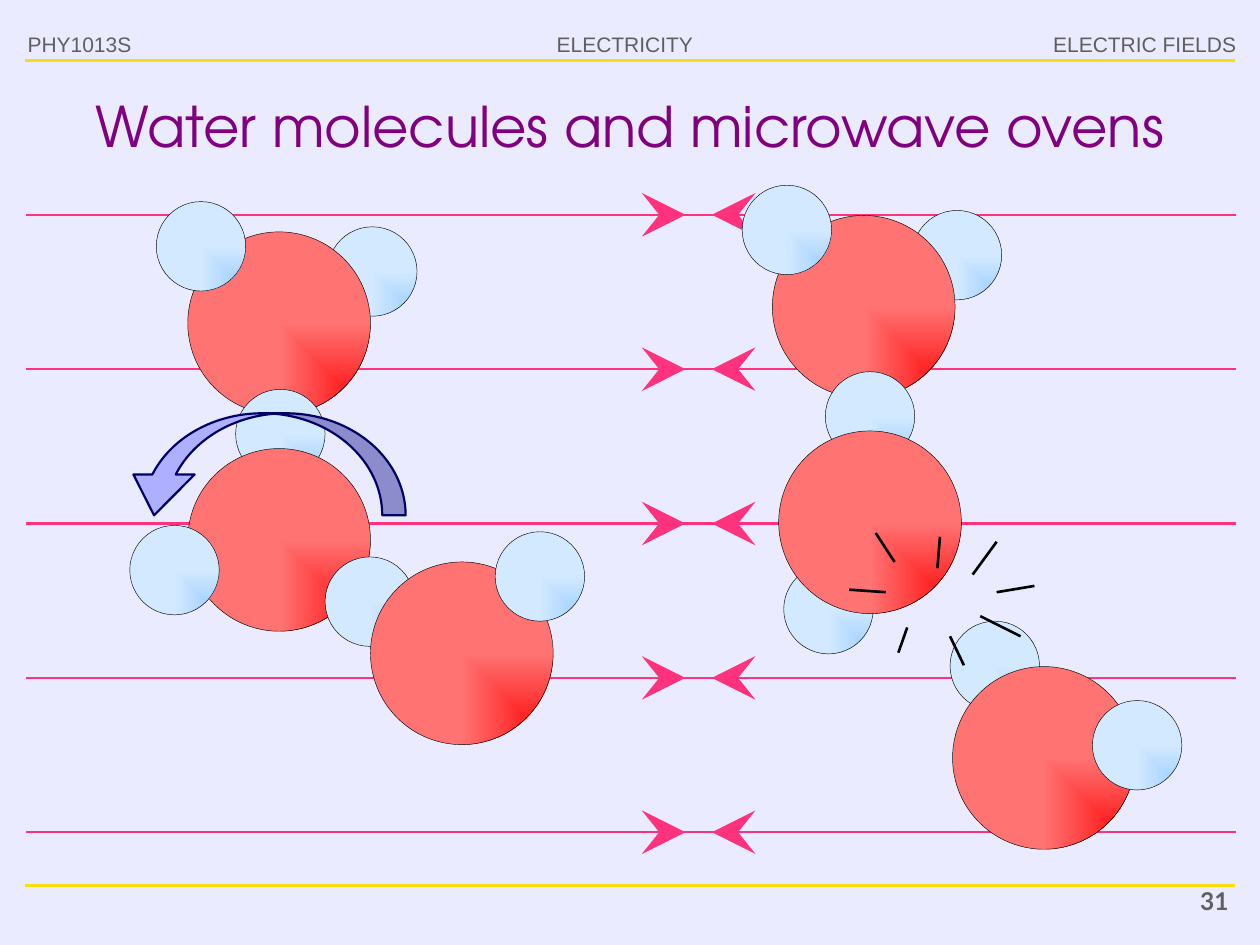
import pptx
import pptx.util
import pptx.oxml
import pptx.oxml.ns
from pptx.dml.color import RGBColor
from pptx.enum.shapes import MSO_CONNECTOR, MSO_SHAPE
from pptx.enum.text import MSO_ANCHOR, PP_ALIGN

BACKGROUND = RGBColor(0xEB, 0xEB, 0xFF)
YELLOW = RGBColor(0xF8, 0xDC, 0x0E)
GREY = RGBColor(0x5F, 0x5F, 0x5F)
PURPLE = RGBColor(0x80, 0x00, 0x80)
PINK = RGBColor(0xFF, 0x32, 0x7D)
BLACK = RGBColor(0x00, 0x00, 0x00)
LAVENDER = RGBColor(0xAF, 0xAF, 0xFF)
NAVY = RGBColor(0x00, 0x00, 0x66)
OXYGEN_DARK, OXYGEN_LIGHT = RGBColor(0xFF, 0x00, 0x00), RGBColor(0xFF, 0x73, 0x73)
HYDROGEN_DARK, HYDROGEN_LIGHT = RGBColor(0x99, 0xCC, 0xFF), RGBColor(0xD2, 0xE9, 0xFF)

presentation = pptx.Presentation()
presentation.slide_width = pptx.util.Inches(10)
presentation.slide_height = pptx.util.Inches(7.5)

# All places are counted on a grid of 100 columns and 75 rows
COLUMN = presentation.slide_width / 100
ROW = presentation.slide_height / 75

slide = presentation.slides.add_slide(presentation.slide_layouts[5])
slide.background.fill.solid()
slide.background.fill.fore_color.rgb = BACKGROUND


def add_line(start, end, color, width, arrow=False):
    line = slide.shapes.add_connector(
        MSO_CONNECTOR.STRAIGHT,
        round(start[0] * COLUMN), round(start[1] * ROW),
        round(end[0] * COLUMN), round(end[1] * ROW))
    line.line.color.rgb = color
    line.line.width = pptx.util.Pt(width)
    properties = line._element.spPr
    if arrow:
        head = pptx.oxml.parse_xml(
            f'<a:tailEnd {pptx.oxml.ns.nsdecls("a")} type="stealth" w="lg" len="lg"/>')
        properties.ln.append(head)
    properties.append(pptx.oxml.parse_xml(f'<a:effectLst {pptx.oxml.ns.nsdecls("a")}/>'))


def add_outlined_shape(kind, left, top, width, height, color, line_width):
    shape = slide.shapes.add_shape(
        kind, round(left * COLUMN), round(top * ROW),
        round(width * COLUMN), round(height * ROW))
    shape.line.color.rgb = color
    shape.line.width = pptx.util.Pt(line_width)
    shape.shadow.inherit = False
    return shape


# Yellow rules under the header and above the page number
for rule_row in (4.8, 70.3):
    add_line((2, rule_row), (98, rule_row), YELLOW, 1.75)

# Header texts and page number
for text, left, top, width, height, align, font, size, bold in (
        ("PHY1013S", 1.2, 2, 11.8, 3.2, PP_ALIGN.LEFT, "Arial", 12, False),
        ("ELECTRICITY", 42.1, 2, 15, 3, PP_ALIGN.CENTER, "Arial", 12, False),
        ("ELECTRIC FIELDS", 77.2, 2, 21.9, 3, PP_ALIGN.RIGHT, "Arial", 12, False),
        ("31", 88.2, 69.8, 10.3, 3.7, PP_ALIGN.RIGHT, "Lato", 14, True)):
    box = slide.shapes.add_textbox(
        round(left * COLUMN), round(top * ROW), round(width * COLUMN), round(height * ROW))
    box.text_frame.word_wrap = True
    paragraph = box.text_frame.paragraphs[0]
    paragraph.alignment = align
    run = paragraph.add_run()
    run.text = text
    run.font.name = font
    run.font.size = pptx.util.Pt(size)
    run.font.bold = bold
    run.font.color.rgb = GREY

# Title
title = slide.shapes.title
title.left, title.top = round(5 * COLUMN), round(6.3 * ROW)
title.width, title.height = round(90 * COLUMN), round(7.2 * ROW)
title.text_frame.vertical_anchor = MSO_ANCHOR.MIDDLE
paragraph = title.text_frame.paragraphs[0]
paragraph.alignment = PP_ALIGN.CENTER
run = paragraph.add_run()
run.text = "Water molecules and microwave ovens"
run.font.name = "TeX Gyre Adventor"
run.font.size = pptx.util.Pt(32)
run.font.color.rgb = PURPLE

# Field lines, each with arrowheads pointing both ways
for index in range(5):
    field_row = 17.05 + 12.25 * index
    add_line((58.3, field_row), (56.5, field_row), PINK, 5, arrow=True)
    add_line((2.1, field_row), (98.1, field_row), PINK, 1.25)
    add_line((52.6, field_row), (54.4, field_row), PINK, 5, arrow=True)

# Atoms from back to front: left chain, then right chain
OXYGEN = (14.5, OXYGEN_DARK, OXYGEN_LIGHT)
HYDROGEN = (7.1, HYDROGEN_DARK, HYDROGEN_LIGHT)
for (diameter, dark, light), left, top in (
        (HYDROGEN, 26, 18), (OXYGEN, 14.9, 18.4), (HYDROGEN, 12.4, 16),
        (HYDROGEN, 18.7, 30.9), (OXYGEN, 14.9, 35.6), (HYDROGEN, 10.3, 41.7),
        (HYDROGEN, 25.8, 44.2), (OXYGEN, 29.4, 44.6), (HYDROGEN, 39.3, 42.2),
        (HYDROGEN, 62.2, 44.8), (HYDROGEN, 75.4, 49.3), (OXYGEN, 75.6, 52.9),
        (HYDROGEN, 86.7, 55.6), (HYDROGEN, 72.4, 16.7), (OXYGEN, 61.3, 17.1),
        (HYDROGEN, 58.9, 14.7), (HYDROGEN, 65.5, 29.5), (OXYGEN, 61.8, 34.2)):
    atom = add_outlined_shape(MSO_SHAPE.OVAL, left, top, diameter, diameter, BLACK, 0.25)
    gradient = pptx.oxml.parse_xml(
        f'<a:gradFill {pptx.oxml.ns.nsdecls("a")} rotWithShape="0"><a:gsLst>'
        f'<a:gs pos="0"><a:srgbClr val="{dark}"/></a:gs>'
        f'<a:gs pos="100000"><a:srgbClr val="{light}"/></a:gs></a:gsLst>'
        '<a:path path="rect"><a:fillToRect l="100000" t="100000"/></a:path></a:gradFill>')
    atom._element.spPr.insert(2, gradient)

# Sparks around the broken bond
for start, end in (
        ((69.5, 42.3), (71, 44.6)), ((79.1, 47), (82.1, 46.5)),
        ((77.8, 48.9), (81, 50.5)), ((75.4, 50.5), (76.5, 52.8)),
        ((70.3, 47), (67.4, 46.8)), ((72, 49.8), (71.3, 51.8)),
        ((74.4, 45.1), (74.6, 42.6)), ((77.2, 45.6), (79.1, 43))):
    add_line(start, end, BLACK, 1.5)

# Rotation arrow
rotation_arrow = add_outlined_shape(
    MSO_SHAPE.CURVED_DOWN_ARROW, 9.8, 32.8, 22.4, 8.1, NAVY, 1.25)
rotation_arrow.fill.solid()
rotation_arrow.fill.fore_color.rgb = LAVENDER
rotation_arrow._element.spPr.xfrm.set("flipH", "1")
for index, value in enumerate((0.23, 0.6, 0.4)):
    rotation_arrow.adjustments[index] = value

presentation.save("out.pptx")
